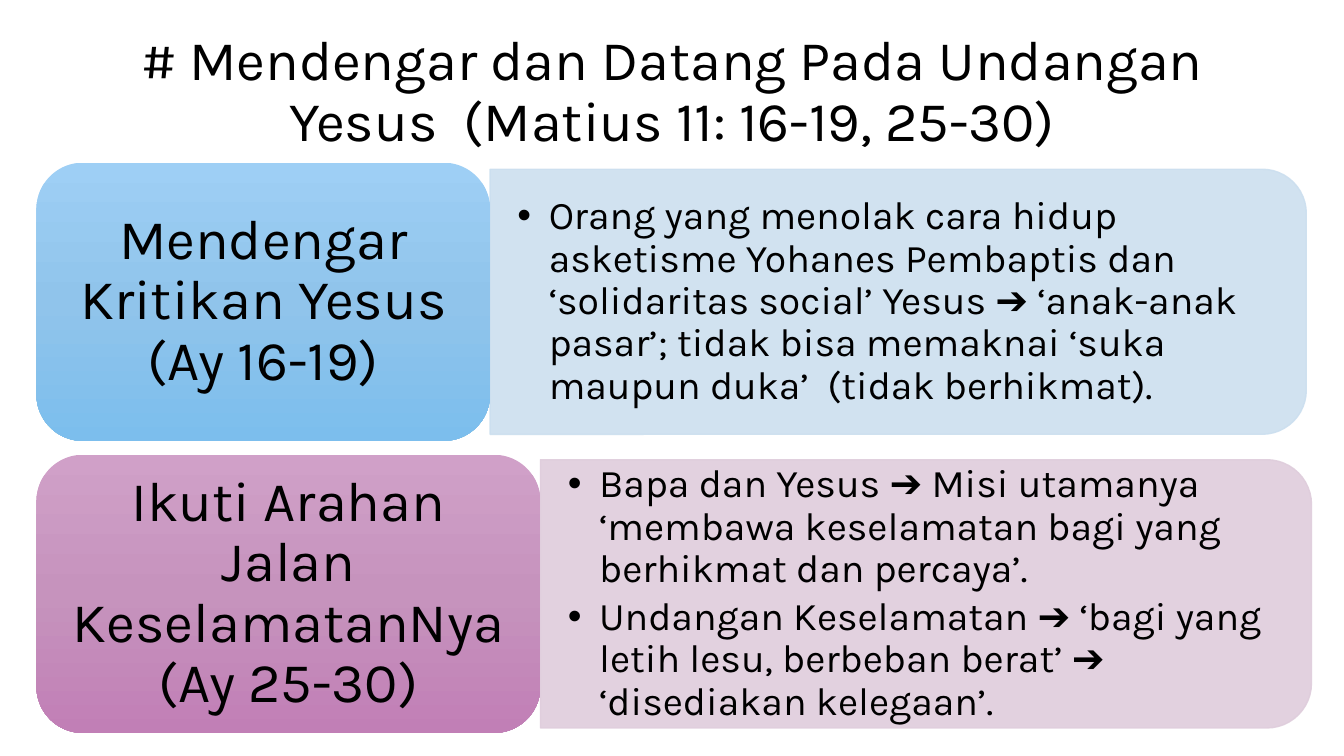
from copy import deepcopy
from dataclasses import dataclass

from lxml import etree
from pptx import Presentation
from pptx.dml.color import RGBColor
from pptx.enum.shapes import MSO_SHAPE
from pptx.enum.text import MSO_ANCHOR, MSO_AUTO_SIZE, PP_ALIGN
from pptx.oxml.ns import qn
from pptx.util import Cm, Pt

ROUNDED = MSO_SHAPE.ROUNDED_RECTANGLE
ROUNDED_TOP = MSO_SHAPE.ROUND_2_SAME_RECTANGLE
MIDDLE = MSO_ANCHOR.MIDDLE
CENTER = PP_ALIGN.CENTER
LEFT = PP_ALIGN.LEFT
NO_AUTOFIT = MSO_AUTO_SIZE.NONE

FONT = "Karla"
BLACK = RGBColor(0x00, 0x00, 0x00)
BLUE_GRADIENT = (RGBColor(0x9E, 0xCF, 0xF5), RGBColor(0x90, 0xC4, 0xEB), RGBColor(0x7C, 0xBE, 0xED))
PURPLE_GRADIENT = (RGBColor(0xD0, 0xA0, 0xC8), RGBColor(0xC6, 0x93, 0xBD), RGBColor(0xC1, 0x7F, 0xB6))
PALE_BLUE = RGBColor(0xCC, 0xDF, 0xEF)
PALE_PURPLE = RGBColor(0xDF, 0xCD, 0xDC)

LABEL_LEFT = Cm(0.92)
LABEL_HEIGHT = Cm(7.01)
HEADING_SIZE = 40
BODY_SIZE = 28
BULLET_INDENT = Cm(0.79)


@dataclass
class Section:
    heading: str
    points: list[str]
    top: float
    label_width: float
    panel_width: float
    panel_height: float
    gradient: tuple[RGBColor, RGBColor, RGBColor]
    panel_color: RGBColor


SECTIONS = [
    Section(
        "Mendengar Kritikan Yesus (Ay 16-19)",
        ["Orang yang menolak cara hidup asketisme Yohanes Pembaptis dan "
         "‘solidaritas social’ Yesus ➔ ‘anak-anak pasar’; tidak bisa memaknai "
         "‘suka maupun duka’  (tidak berhikmat)."],
        4.1, 11.43, 20.57, 6.68, BLUE_GRADIENT, PALE_BLUE,
    ),
    Section(
        "Ikuti Arahan Jalan KeselamatanNya (Ay 25-30)",
        ["Bapa dan Yesus ➔ Misi utamanya ‘membawa keselamatan bagi yang "
         "berhikmat dan percaya’.",
         "Undangan Keselamatan ➔ ‘bagi yang letih lesu, berbeban berat’ ➔ "
         "‘disediakan kelegaan’."],
        11.46, 12.7, 19.43, 6.76, PURPLE_GRADIENT, PALE_PURPLE,
    ),
]


def format_paragraph(paragraph, size: int, alignment: PP_ALIGN) -> None:
    paragraph.alignment = alignment
    paragraph.line_spacing = 0.9
    for run in paragraph.runs:
        run.font.name = FONT
        run.font.size = Pt(size)
        run.font.color.rgb = BLACK


def set_frame(text_frame, horizontal: float, vertical: float) -> None:
    """Wrap, centre vertically and set the insets in centimetres."""
    text_frame.word_wrap = True
    text_frame.auto_size = NO_AUTOFIT
    text_frame.vertical_anchor = MIDDLE
    text_frame.margin_left = text_frame.margin_right = Cm(horizontal)
    text_frame.margin_top = text_frame.margin_bottom = Cm(vertical)


def add_bullet(paragraph) -> None:
    properties = paragraph._p.get_or_add_pPr()
    properties.set("marL", str(BULLET_INDENT))
    properties.set("indent", str(-BULLET_INDENT))
    etree.SubElement(properties, qn("a:buFont"), typeface="Arial")
    etree.SubElement(properties, qn("a:buChar"), char="•")


def fill_gradient(shape, colors: tuple[RGBColor, RGBColor, RGBColor]) -> None:
    """Fill from top to bottom with three evenly spaced colours."""
    shape.fill.gradient()
    shape.fill.gradient_angle = 270
    stop_list = shape._element.spPr.find(qn("a:gradFill")).find(qn("a:gsLst"))
    stop_list.insert(1, deepcopy(stop_list[0]))
    for index, (stop, color) in enumerate(zip(shape.fill.gradient_stops, colors)):
        stop.position = index / 2
        stop.color.rgb = color


def add_label(slide, section: Section) -> None:
    label = slide.shapes.add_shape(
        ROUNDED, LABEL_LEFT, Cm(section.top), Cm(section.label_width), LABEL_HEIGHT)
    label.shadow.inherit = False
    label.line.fill.background()
    fill_gradient(label, section.gradient)
    set_frame(label.text_frame, 0.42, 0.2)
    label.text_frame.text = section.heading
    format_paragraph(label.text_frame.paragraphs[0], HEADING_SIZE, CENTER)


def add_panel(slide, section: Section) -> None:
    """Draw the panel on its side, right of the label, with its bullets on top."""
    left = LABEL_LEFT + Cm(section.label_width)
    middle = Cm(section.top) + LABEL_HEIGHT // 2
    width, height = Cm(section.panel_width), Cm(section.panel_height)
    panel = slide.shapes.add_shape(
        ROUNDED_TOP, left + (width - height) // 2, middle - width // 2, height, width)
    panel.rotation = 90
    panel.shadow.inherit = False
    panel.fill.solid()
    panel.fill.fore_color.rgb = section.panel_color
    panel.line.color.rgb = section.panel_color
    panel.line.width = Pt(1)
    for color in panel._element.spPr.iter(qn("a:srgbClr")):
        etree.SubElement(color, qn("a:alpha"), val="90000")

    text_height = height - Cm(0.66)
    text_box = slide.shapes.add_textbox(
        left, middle - text_height // 2, width - Cm(0.33), text_height)
    text_frame = text_box.text_frame
    set_frame(text_frame, 0.69, 0.35)
    text_frame.text = "\n".join(section.points)
    for paragraph in text_frame.paragraphs:
        format_paragraph(paragraph, BODY_SIZE, LEFT)
        paragraph.space_after = Pt(4)
        add_bullet(paragraph)


def add_title(slide) -> None:
    title = slide.shapes.title
    title.left, title.top, title.width, title.height = Cm(2.33), Cm(1.01), Cm(29.21), Cm(2.67)
    set_frame(title.text_frame, 0.25, 0.13)
    title.text_frame.text = "# Mendengar dan Datang Pada Undangan Yesus  (Matius 11: 16-19, 25-30)"
    format_paragraph(title.text_frame.paragraphs[0], HEADING_SIZE, CENTER)


def main() -> None:
    presentation = Presentation()
    presentation.slide_width = Cm(33.87)
    presentation.slide_height = Cm(19.05)
    slide = presentation.slides.add_slide(presentation.slide_layouts[5])
    add_title(slide)
    for section in SECTIONS:
        add_panel(slide, section)
        add_label(slide, section)
    presentation.save("out.pptx")


if __name__ == "__main__":
    main()
